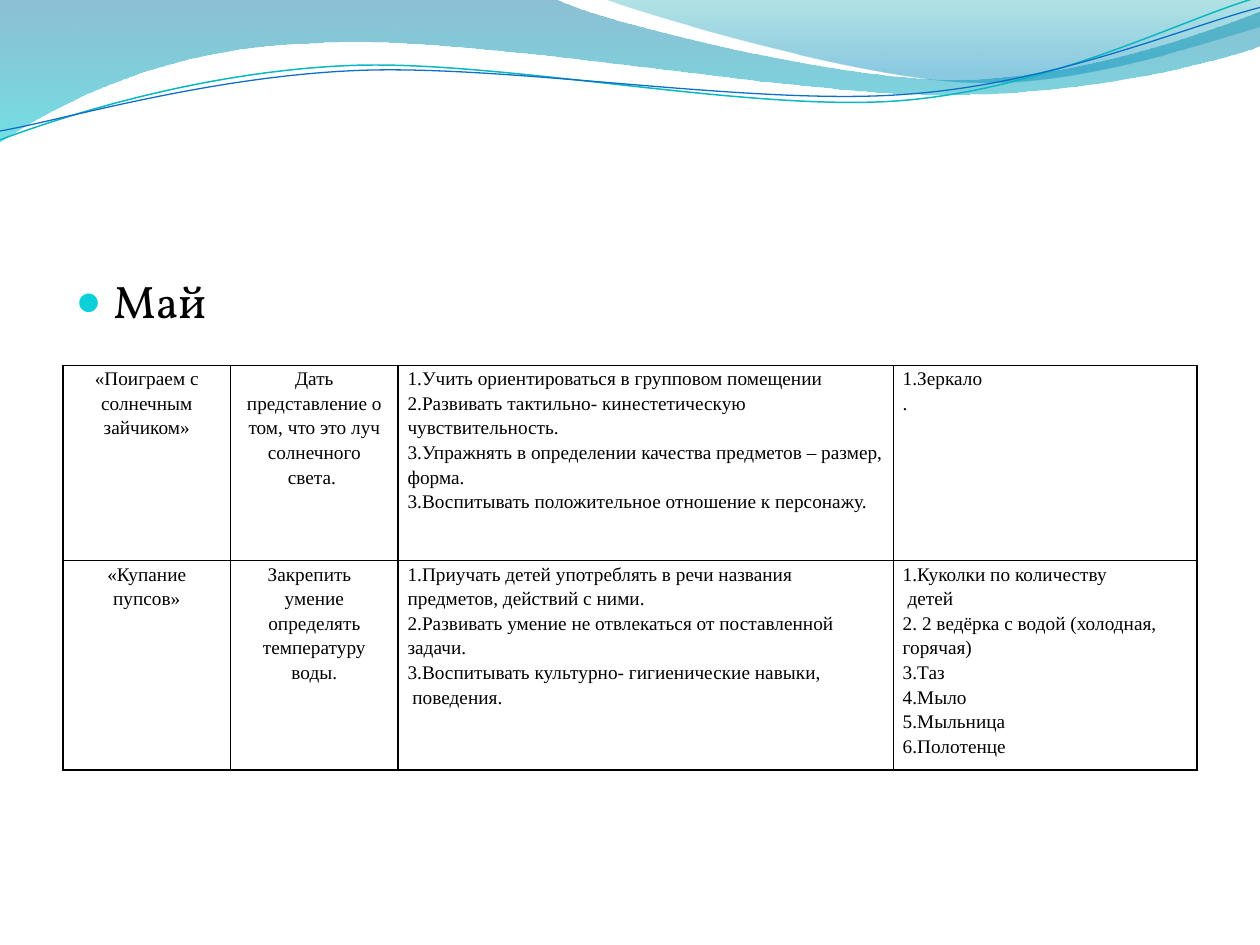
from math import cos, radians, sin

from lxml import etree
from pptx import Presentation
from pptx.dml.color import RGBColor
from pptx.enum.text import MSO_ANCHOR, PP_ALIGN
from pptx.oxml.ns import qn
from pptx.util import Inches, Pt

COLORS = {
    "black": "000000", "bullet": "0BD0D9",
    "deep": "0074A1", "aqua": "00C6CF", "teal": "00A1A9", "sky": "008BBF",
    "cyan": "0AB8BF", "blue": "0F6FC6",
}
TILT = 2.7  # degrees the thin curves lean to the left


def write(par, text, font="Times New Roman", size=11, align=PP_ALIGN.LEFT, space=1.15):
    par.alignment = align
    par.line_spacing = space
    run = par.add_run()
    run.text = text.replace("~", chr(160))  # a tilde marks a hard space
    run.font.name = font
    run.font.size = Pt(size)
    run.font.bold = False
    run.font.color.rgb = RGBColor.from_string(COLORS["black"])


def trace(start, parts, close):
    """Draw a path: pairs are straight segments, sixes are Bezier curves."""
    dots = [start] + [dot for part in parts for dot in zip(part[::2], part[1::2])]
    dots = [(Inches(x), Inches(y)) for x, y in dots]
    pen = slide.shapes.build_freeform(*dots[0])
    pen.add_line_segments(dots[1:], close=close)
    shape = pen.convert_to_shape()
    shape.shadow.inherit = False
    # Join each three control points into one curve
    lines = iter(list(shape.element.iter(qn("a:lnTo"))))
    for part in parts:
        group = [next(lines) for _ in part[::2]]
        if len(group) == 3:
            bend = etree.Element(qn("a:cubicBezTo"))
            group[0].addprevious(bend)
            for line in group:
                bend.append(line[0])
                line.getparent().remove(line)
    return shape


deck = Presentation()
deck.slide_width, deck.slide_height = Inches(10), Inches(7.5)
slide = deck.slides.add_slide(deck.slide_layouts[1])
title = slide.shapes.title
title.element.getparent().remove(title.element)

# Waves: start, segments, gradient stops as (position, colour, opacity %)
WAVES = [
    ((0, 0),
     [(4.4, -0.01), (4.76, 0.17, 6.64, 0.63, 7.58, 0.63),
      (8.53, 0.63, 9.58, 0.26, 10, 0.09), (10.01, 0.36),
      (9.83, 0.44, 8.7, 0.76, 7.46, 0.75), (6.22, 0.75, 3.82, 0.28, 2.57, 0.34),
      (1.29, 0.36, 0.46, 0.83, -0.01, 1.13)],
     [(0, "deep", 45), (1, "aqua", 55)]),
    ((4.79, -0.01),
     [(5.09, 0.11, 6.82, 0.62, 7.69, 0.65), (8.56, 0.69, 9.61, 0.32, 10, 0.21), (10, 0)],
     [(0, "teal", 30), (0.8, "sky", 45)]),
]
for start, parts, stops in WAVES:
    wave = trace(start, parts, True)
    wave.line.fill.background()
    wave.fill.gradient()
    wave.fill.gradient_angle = 270
    for stop, (pos, color, alpha) in zip(wave.fill.gradient_stops, stops):
        stop.position = pos
        stop.color.rgb = RGBColor.from_string(COLORS[color])
    for tint, (pos, color, alpha) in zip(wave.element.spPr.iter(qn("a:srgbClr")), stops):
        etree.SubElement(tint, qn("a:alpha"), val=str(alpha * 1000))

# Thin curves: centre, points, colour, width; levelled first, then tilted as shapes
CURVES = [
    ((4.99, 0.58),
     [(0, 1.11), (0.48, 0.93), (1.58, 0.57), (2.77, 0.52), (3.95, 0.47),
      (5.93, 0.89), (7.13, 0.8), (8.33, 0.71), (9.38, 0.15), (9.98, -0.02)], "cyan", 0.85),
    ((5, 0.59),
     [(0, 1.04), (0.47, 0.96), (1.64, 0.61), (2.83, 0.56), (4.03, 0.51),
      (5.97, 0.84), (7.17, 0.75), (8.36, 0.67), (9.41, 0.21), (10, 0.06)], "blue", 0.75),
]
co, si = cos(radians(TILT)), sin(radians(TILT))
for (mx, my), dots, color, width in CURVES:
    flat = [(mx + (x - mx) * co - (y - my) * si, my + (x - mx) * si + (y - my) * co)
            for x, y in dots]
    bends = [sum(flat[i:i + 3], ()) for i in range(1, len(flat), 3)]
    curve = trace(flat[0], bends, False)
    curve.rotation = 360 - TILT
    curve.fill.background()
    curve.line.color.rgb = RGBColor.from_string(COLORS[color])
    curve.line.width = Pt(width)

# Month
body = slide.placeholders[1]
body.left, body.top, body.width, body.height = map(Inches, (0.5, 2.12, 9, 4.8))
body.text_frame.vertical_anchor = MSO_ANCHOR.TOP
month = body.text_frame.paragraphs[0]
write(month, "Май", font="Vollkorn", size=26, space=1.0)
month.space_before = Pt(5.2)
props = month._p.get_or_add_pPr()
props.set("marL", str(Inches(0.3)))
props.set("indent", str(Inches(-0.3)))
tone = etree.SubElement(props, qn("a:buClr"))
etree.SubElement(tone, qn("a:srgbClr"), val=COLORS["bullet"])
etree.SubElement(props, qn("a:buSzPct"), val="95000")
etree.SubElement(props, qn("a:buChar"), char="●")

# Table of games: name, aim, tasks, items
ROWS = [
    [["«Поиграем с солнечным зайчиком»"],
     ["Дать представление о том, что это луч солнечного света.~"],
     ["1.Учить ориентироваться в групповом помещении",
      "2.Развивать тактильно- кинестетическую чувствительность.",
      "3.Упражнять в определении качества предметов – размер, форма.",
      "3.Воспитывать положительное отношение к персонажу."],
     ["1.Зеркало", "."]],
    [["«Купание пупсов»"],
     ["Закрепить ~ умение определять температуру воды."],
     ["1.Приучать детей употреблять в речи названия предметов, действий с ними.",
      "2.Развивать умение не отвлекаться от поставленной задачи.",
      "3.Воспитывать культурно- гигиенические навыки, ~поведения."],
     ["1.Куколки по количеству", " детей", "2. 2 ведёрка с водой (холодная, горячая)",
      "3.Таз", "4.Мыло", "5.Мыльница", "6.Полотенце"]],
]
frame = slide.shapes.add_table(2, 4, Inches(0.5), Inches(2.9), Inches(9), Inches(3.21))
table = frame.table
table.first_row = table.horz_banding = False
for col, width in zip(table.columns, (1.33, 1.33, 3.93, 2.41)):
    col.width = Inches(width)
for row, height in zip(table.rows, (1.55, 1.66)):
    row.height = Inches(height)
for r, row in enumerate(ROWS):
    for c, lines in enumerate(row):
        cell = table.cell(r, c)
        cell.margin_left = cell.margin_right = Pt(5.4)
        cell.margin_top = cell.margin_bottom = 0
        cell.vertical_anchor = MSO_ANCHOR.TOP
        align = PP_ALIGN.CENTER if c < 2 else PP_ALIGN.LEFT
        for i, line in enumerate(lines):
            text = cell.text_frame
            par = text.paragraphs[0] if i == 0 else text.add_paragraph()
            write(par, line, align=align)
        # Borders precede the fill in the cell properties
        tcpr = cell._tc.get_or_add_tcPr()
        for side in ("lnL", "lnR", "lnT", "lnB"):
            edge = etree.SubElement(tcpr, qn("a:" + side), w=str(Pt(1)))
            solid = etree.SubElement(edge, qn("a:solidFill"))
            etree.SubElement(solid, qn("a:srgbClr"), val=COLORS["black"])
        cell.fill.background()

deck.save("out.pptx")
